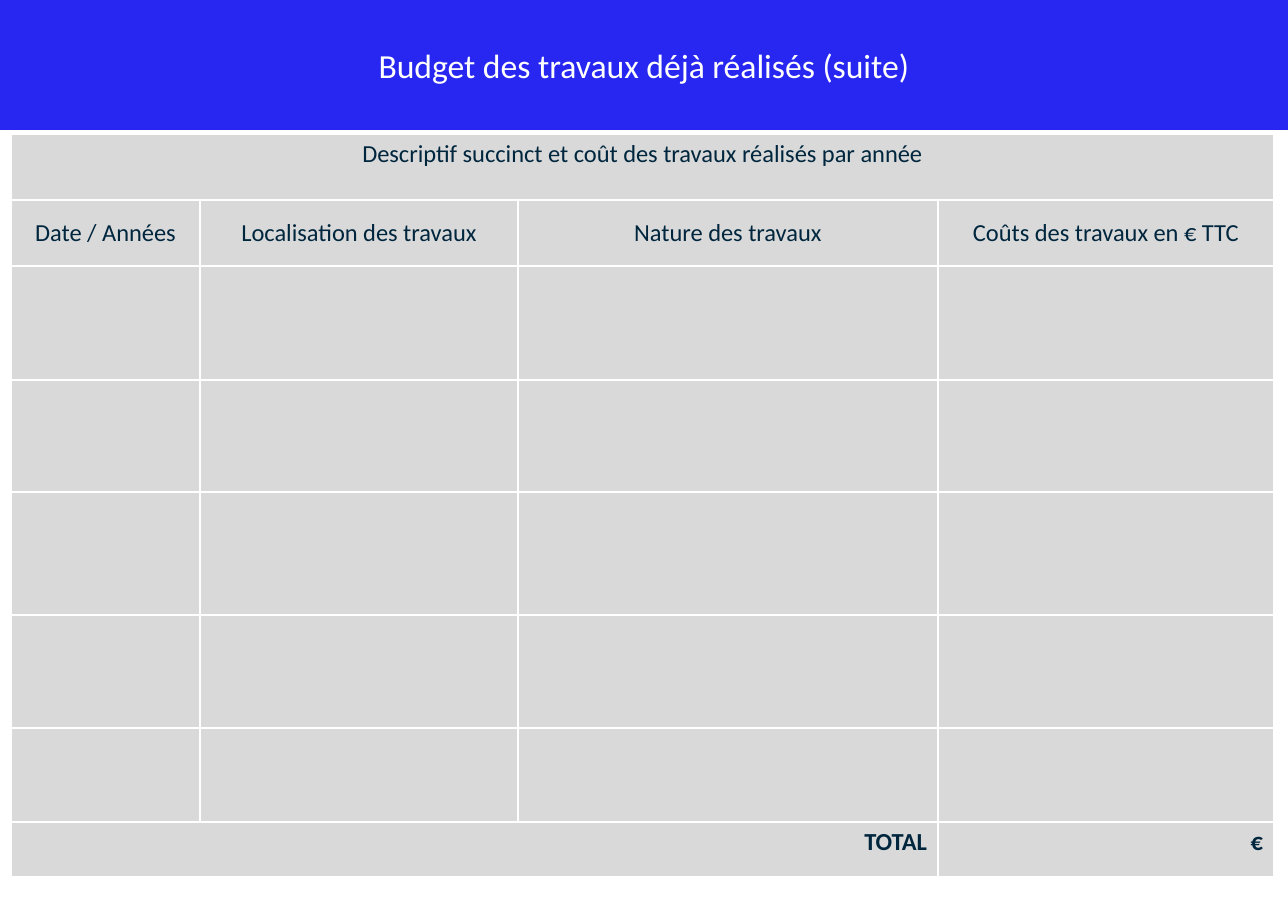
import pptx
import pptx.util
import pptx.dml.color
import pptx.enum.shapes
import pptx.enum.text
import pptx.oxml
import pptx.oxml.ns

PX = 8298  # EMU per px, 110.2 px to the inch
COLORS = {"banner": "2727F1", "cell": "D9D9D9", "ink": "00263E", "white": "FFFFFF"}
ALIGN = pptx.enum.text.PP_ALIGN
MIDDLE = pptx.enum.text.MSO_ANCHOR.MIDDLE


def color(name):
    return pptx.dml.color.RGBColor.from_string(COLORS[name])


def write(frame, text, size, ink, align, bold=False):
    """Fill a text frame with one paragraph in a single format."""
    frame.text = text
    paragraph = frame.paragraphs[0]
    paragraph.alignment = align
    font = paragraph.runs[0].font if text else paragraph.font
    font.name = "Calibri"
    font.size = pptx.util.Pt(size)
    font.bold = bold
    font.color.rgb = color(ink)


prs = pptx.Presentation()
prs.slide_width = 1288 * PX
prs.slide_height = 911 * PX
slide = prs.slides.add_slide(prs.slide_layouts[6])

# Budget table
column_widths = [189, 318, 420, 336]
row_heights = [66, 66, 114, 112, 123, 113, 94, 55]
headings = ["Date / Années", "Localisation des travaux", "Nature des travaux",
            "Coûts des travaux en € TTC"]
last_row = len(row_heights) - 1
texts = {(0, 0): "Descriptif succinct et coût des travaux réalisés par année",
         (last_row, 0): "TOTAL", (last_row, 3): "€"}
texts.update({(1, c): heading for c, heading in enumerate(headings)})

budget = slide.shapes.add_table(
    len(row_heights), len(column_widths), 11 * PX, 134 * PX,
    sum(column_widths) * PX, sum(row_heights) * PX).table
for column, width in zip(budget.columns, column_widths):
    column.width = width * PX
for row, height in zip(budget.rows, row_heights):
    row.height = height * PX

for r in range(len(row_heights)):
    for c in range(len(column_widths)):
        cell = budget.cell(r, c)
        total = r == last_row
        write(cell.text_frame, texts.get((r, c), ""), 16, "ink",
              ALIGN.RIGHT if total else ALIGN.CENTER, bold=total)
        if r == 1:
            cell.vertical_anchor = MIDDLE
        properties = cell._tc.get_or_add_tcPr()
        for side in ("lnL", "lnR", "lnT", "lnB"):
            properties.append(pptx.oxml.parse_xml(
                f'<a:{side} {pptx.oxml.ns.nsdecls("a")} w="19050"><a:solidFill>'
                f'<a:srgbClr val="{COLORS["white"]}"/></a:solidFill></a:{side}>'))
        cell.fill.solid()
        cell.fill.fore_color.rgb = color("cell")

budget.cell(0, 0).merge(budget.cell(0, 3))
budget.cell(last_row, 0).merge(budget.cell(last_row, 2))

# Title banner
banner = slide.shapes.add_shape(
    pptx.enum.shapes.MSO_SHAPE.RECTANGLE, 0, 0, prs.slide_width, 130 * PX)
banner.shadow.inherit = False
banner.fill.solid()
banner.fill.fore_color.rgb = color("banner")
banner.line.fill.background()
banner.text_frame.word_wrap = True
banner.text_frame.vertical_anchor = MIDDLE
write(banner.text_frame, "Budget des travaux déjà réalisés (suite)", 22, "white", ALIGN.CENTER)

prs.save("out.pptx")
